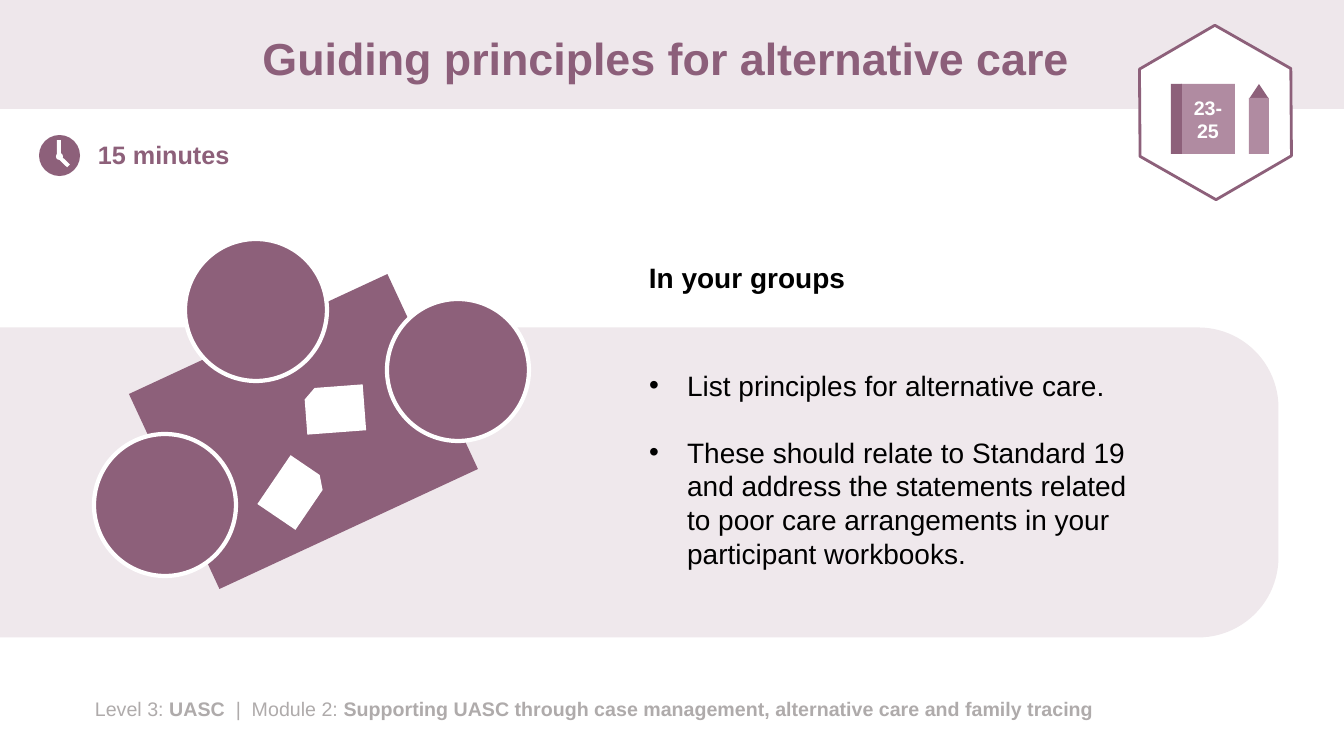
from pptx import Presentation
from pptx.dml.color import RGBColor
from pptx.enum.shapes import MSO_SHAPE
from pptx.enum.text import MSO_ANCHOR, MSO_AUTO_SIZE, PP_ALIGN
from pptx.oxml import parse_xml
from pptx.oxml.ns import nsdecls
from pptx.util import Pt

RECT, OVAL = MSO_SHAPE.RECTANGLE, MSO_SHAPE.OVAL
HEXAGON, TRIANGLE = MSO_SHAPE.HEXAGON, MSO_SHAPE.ISOSCELES_TRIANGLE
ROUND_TOP, SNIPPED = MSO_SHAPE.ROUND_2_SAME_RECTANGLE, MSO_SHAPE.SNIP_1_RECTANGLE
MIDDLE, TOP = MSO_ANCHOR.MIDDLE, MSO_ANCHOR.TOP
CENTER, LEFT = PP_ALIGN.CENTER, PP_ALIGN.LEFT
NO_AUTOFIT = MSO_AUTO_SIZE.NONE

PX = 914400 / 100.8
FONT = "Arial"
COLORS = {
    "plum": "8D607A", "title": "8C5F7A", "mauve": "B08BA1", "band": "EEE7EB",
    "panel": "EFE8EC", "footer": "AFABAB", "white": "FFFFFF", "black": "000000",
}

prs = Presentation()
prs.slide_width, prs.slide_height = round(1344 * PX), round(756 * PX)
slide = prs.slides.add_slide(prs.slide_layouts[1])


def add_block(kind, box, fill, rotation=0, line=None, line_width=0, adjust=None):
    """Add a flat preset shape; box is left, top, width, height in px."""
    block = slide.shapes.add_shape(kind, *[round(v * PX) for v in box])
    block.shadow.inherit = False
    block.rotation = rotation
    block.fill.solid()
    block.fill.fore_color.rgb = RGBColor.from_string(COLORS[fill])
    if line:
        block.line.color.rgb = RGBColor.from_string(COLORS[line])
        block.line.width = Pt(line_width)
    else:
        block.line.fill.background()
    if adjust is not None:
        block.adjustments[0] = adjust
    return block


def write(holder, paragraphs, size, color, bold=False, align=LEFT, anchor=TOP):
    """Fill a text frame with one paragraph per string."""
    frame = holder.text_frame
    frame.text = "\n".join(paragraphs)
    frame.word_wrap = True
    frame.auto_size = NO_AUTOFIT
    frame.vertical_anchor = anchor
    for paragraph in frame.paragraphs:
        paragraph.alignment = align
        paragraph.space_before = Pt(0)
        for run in paragraph.runs:
            run.font.name, run.font.size, run.font.bold = FONT, Pt(size), bold
            run.font.color.rgb = RGBColor.from_string(COLORS[color])


# Background band and panel
add_block(RECT, (0, 0, 1344, 109), "band")
add_block(ROUND_TOP, (484, -157, 310, 1279), "panel", rotation=90, adjust=0.259)

# Title and task list, brought in front of the background
title, tasks = slide.shapes.title, slide.placeholders[1]
for holder, box in ((title, (93, 13, 1159, 96)), (tasks, (639, 363, 516, 214))):
    holder.left, holder.top, holder.width, holder.height = [round(v * PX) for v in box]
    slide.shapes._spTree.append(holder._element)
write(title, ["Guiding principles for alternative care "], 32, "title", True, CENTER, MIDDLE)
title.text_frame.paragraphs[0].line_spacing = 0.9

write(tasks, [
    "List principles for alternative care.",
    "These should relate to Standard 19 and address the statements related "
    "to poor care arrangements in your participant workbooks.",
], 20, "black")
tasks.text_frame.paragraphs[0].space_after = Pt(24)
for paragraph in tasks.text_frame.paragraphs:
    properties = paragraph._p.get_or_add_pPr()
    properties.set("marL", str(round(38 * PX)))
    properties.set("indent", str(round(-38 * PX)))
    properties.append(parse_xml(f'<a:buFont {nsdecls("a")} typeface="{FONT}"/>'))
    properties.append(parse_xml(f'<a:buChar {nsdecls("a")} char="•"/>'))

# Heading, duration and footer
labels = [
    ((639, 256, 516, 44), "In your groups", 20, "black", True),
    ((88, 134, 172, 40), "15 minutes", 18, "plum", True),
    ((85, 692, 1144, 34), "Level 3: ", 14, "footer", False),
]
for box, text, size, color, bold in labels:
    label = slide.shapes.add_textbox(*[round(v * PX) for v in box])
    write(label, [text], size, color, bold)
footer_line = label.text_frame.paragraphs[0]
for text, bold in (
    ("UASC", True),
    ("  |  Module 2: ", False),
    ("Supporting UASC through case management, alternative care and family tracing", True),
):
    run = footer_line.add_run()
    run.text = text
    run.font.name, run.font.size, run.font.bold = FONT, Pt(14), bold
    run.font.color.rgb = RGBColor.from_string(COLORS["footer"])

# Workbook badge
add_block(HEXAGON, (1128, 37, 175, 151), "white", 29.7, "plum", 2, adjust=0.29)
workbook = add_block(RECT, (1181, 84, 54, 70), "mauve")
write(workbook, ["23-25"], 14, "white", True, CENTER, MIDDLE)
add_block(RECT, (1171, 84, 11, 70), "plum")
add_block(TRIANGLE, (1249, 84, 20, 15), "plum")
add_block(RECT, (1249, 98, 20, 56), "mauve")

# Clock
add_block(OVAL, (39, 135, 41, 41), "plum")
add_block(OVAL, (56, 153, 7, 7), "white")
add_block(RECT, (51, 146, 16, 4), "white", 270)
add_block(RECT, (59, 160, 11, 4), "white", 224.2)

# Group at a table with sheets of paper
TABLE_TILT = 335.1
add_block(RECT, (161, 324, 285, 215), "plum", TABLE_TILT)
for left, top in ((94, 434), (185, 239), (387, 299)):
    add_block(OVAL, (left, top, 142, 142), "plum", TABLE_TILT, "white", 3)
for left, top, rotation in ((270, 463, 34.2), (312, 380, 265.7)):
    add_block(SNIPPED, (left, top, 46, 59), "white", rotation, adjust=0.233)

prs.save("out.pptx")
